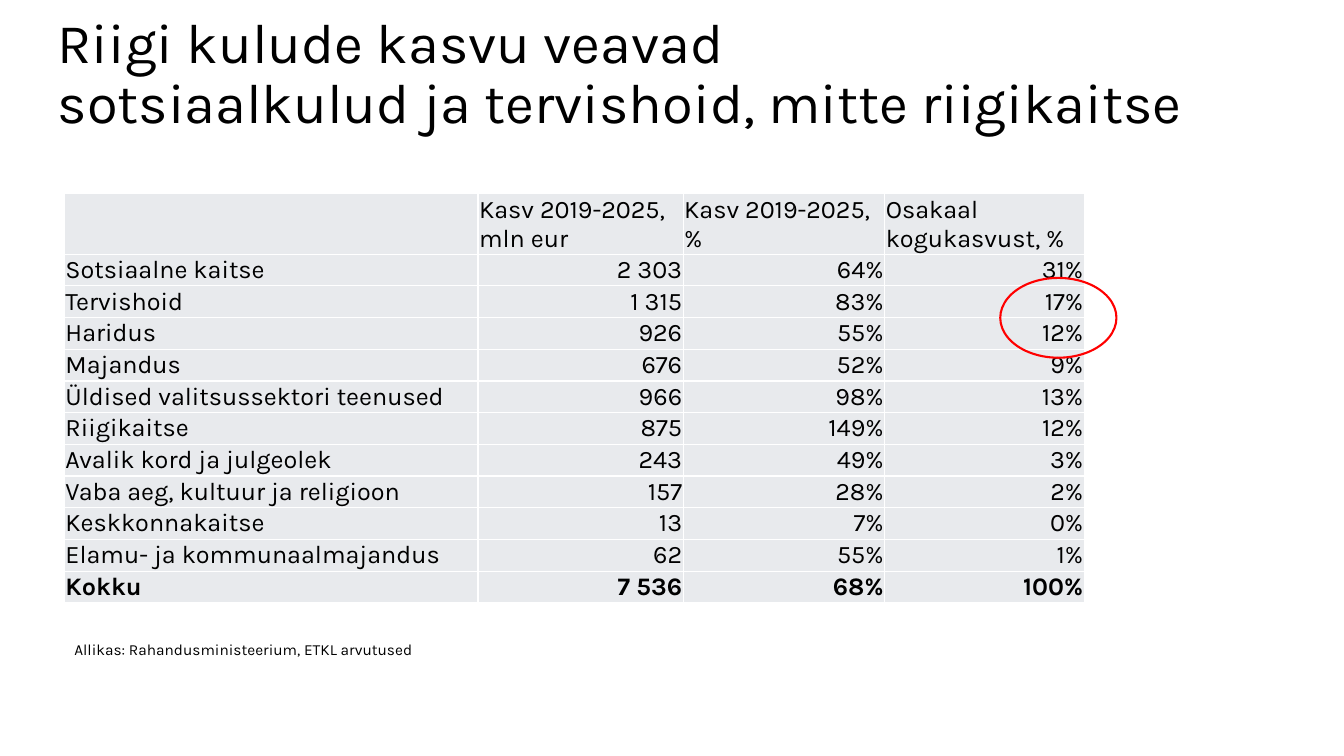
"""Builds a slide with a table of state expenditure growth by function."""
from lxml.etree import SubElement
from pptx import Presentation
from pptx.dml.color import RGBColor
from pptx.enum.shapes import MSO_SHAPE
from pptx.enum.text import MSO_ANCHOR, MSO_AUTO_SIZE, PP_ALIGN
from pptx.oxml.ns import qn
from pptx.util import Pt

TITLE = "Riigi kulude kasvu veavad\vsotsiaalkulud ja tervishoid, mitte riigikaitse"
SOURCE = "Allikas: Rahandusministeerium, ETKL arvutused"
HEADER = ("", "Kasv 2019-2025, mln eur", "Kasv 2019-2025, %", "Osakaal kogukasvust, %")
EXPENSES = [
    ("Sotsiaalne kaitse", "2 303", "64%", "31%"),
    ("Tervishoid", "1 315", "83%", "17%"),
    ("Haridus", "926", "55%", "12%"),
    ("Majandus", "676", "52%", "9%"),
    ("Üldised valitsussektori teenused", "966", "98%", "13%"),
    ("Riigikaitse", "875", "149%", "12%"),
    ("Avalik kord ja julgeolek", "243", "49%", "3%"),
    ("Vaba aeg, kultuur ja religioon", "157", "28%", "2%"),
    ("Keskkonnakaitse", "13", "7%", "0%"),
    ("Elamu- ja kommunaalmajandus", "62", "55%", "1%"),
]
TOTAL = ("Kokku", "7 536", "68%", "100%")

COLORS = {"text": "000000", "cell": "E8EAED", "border": "FFFFFF", "mark": "FF0000"}
FONT = "Karla"
COLUMN_WIDTHS = (295.5, 146.5, 144, 142.5)
HEADER_HEIGHT, ROW_HEIGHT = 42.5, 22.65
TABLE_LEFT, TABLE_TOP = 46, 138.5
CELL_FORMAT = {"margin_left": Pt(0.75), "margin_right": Pt(0.75),
               "margin_top": Pt(0.75), "margin_bottom": Pt(0)}
TITLE_FORMAT = {"left": Pt(34), "top": Pt(1.5), "width": Pt(828), "height": Pt(104.5)}


def color(name):
    return RGBColor.from_string(COLORS[name])


def apply(target, values):
    for name, value in values.items():
        setattr(target, name, value)


def style(paragraph, size, bold=False, align=PP_ALIGN.LEFT):
    paragraph.alignment = align
    apply(paragraph.font, {"name": FONT, "size": Pt(size), "bold": bold})
    paragraph.font.color.rgb = color("text")


def add_borders(cell):
    properties = cell._tc.get_or_add_tcPr()
    for side in ("lnL", "lnR", "lnT", "lnB"):
        line = SubElement(properties, qn(f"a:{side}"), w=str(Pt(1)))
        SubElement(SubElement(line, qn("a:solidFill")), qn("a:srgbClr"), val=COLORS["border"])


def add_title(slide):
    title = slide.shapes.title
    apply(title, TITLE_FORMAT)
    frame = title.text_frame
    frame.text = TITLE
    apply(frame, {"auto_size": MSO_AUTO_SIZE.NONE, "vertical_anchor": MSO_ANCHOR.MIDDLE,
                  "word_wrap": True})
    style(frame.paragraphs[0], 40)
    frame.paragraphs[0].line_spacing = 0.9


def add_expense_table(slide):
    rows = [HEADER, *EXPENSES, TOTAL]
    heights = [HEADER_HEIGHT] + [ROW_HEIGHT] * (len(rows) - 1)
    table = slide.shapes.add_table(len(rows), len(HEADER), Pt(TABLE_LEFT), Pt(TABLE_TOP),
                                   Pt(sum(COLUMN_WIDTHS)), Pt(sum(heights))).table
    apply(table, {"first_row": False, "horz_banding": False})
    for column, width in zip(table.columns, COLUMN_WIDTHS):
        column.width = Pt(width)
    for r, (values, height) in enumerate(zip(rows, heights)):
        table.rows[r].height = Pt(height)
        for c, value in enumerate(values):
            cell = table.cell(r, c)
            cell.text = value
            apply(cell, CELL_FORMAT)
            add_borders(cell)
            cell.fill.solid()
            cell.fill.fore_color.rgb = color("cell")
            align = PP_ALIGN.RIGHT if r and c else PP_ALIGN.LEFT
            style(cell.text_frame.paragraphs[0], 18, values is TOTAL, align)


def add_source(slide):
    frame = slide.shapes.add_textbox(Pt(46), Pt(453.5), Pt(256.5), Pt(21)).text_frame
    frame.text = SOURCE
    frame.word_wrap = False
    style(frame.paragraphs[0], 11)


def add_highlight(slide):
    highlight = slide.shapes.add_shape(MSO_SHAPE.OVAL, Pt(714.5), Pt(198.5), Pt(83), Pt(57))
    highlight.shadow.inherit = False
    highlight.fill.background()
    highlight.line.color.rgb = color("mark")
    highlight.line.width = Pt(1.5)


def main():
    deck = Presentation()
    apply(deck, {"slide_width": Pt(960), "slide_height": Pt(540)})
    slide = deck.slides.add_slide(deck.slide_layouts[5])
    for add_part in (add_title, add_expense_table, add_source, add_highlight):
        add_part(slide)
    deck.save("out.pptx")


if __name__ == "__main__":
    main()
